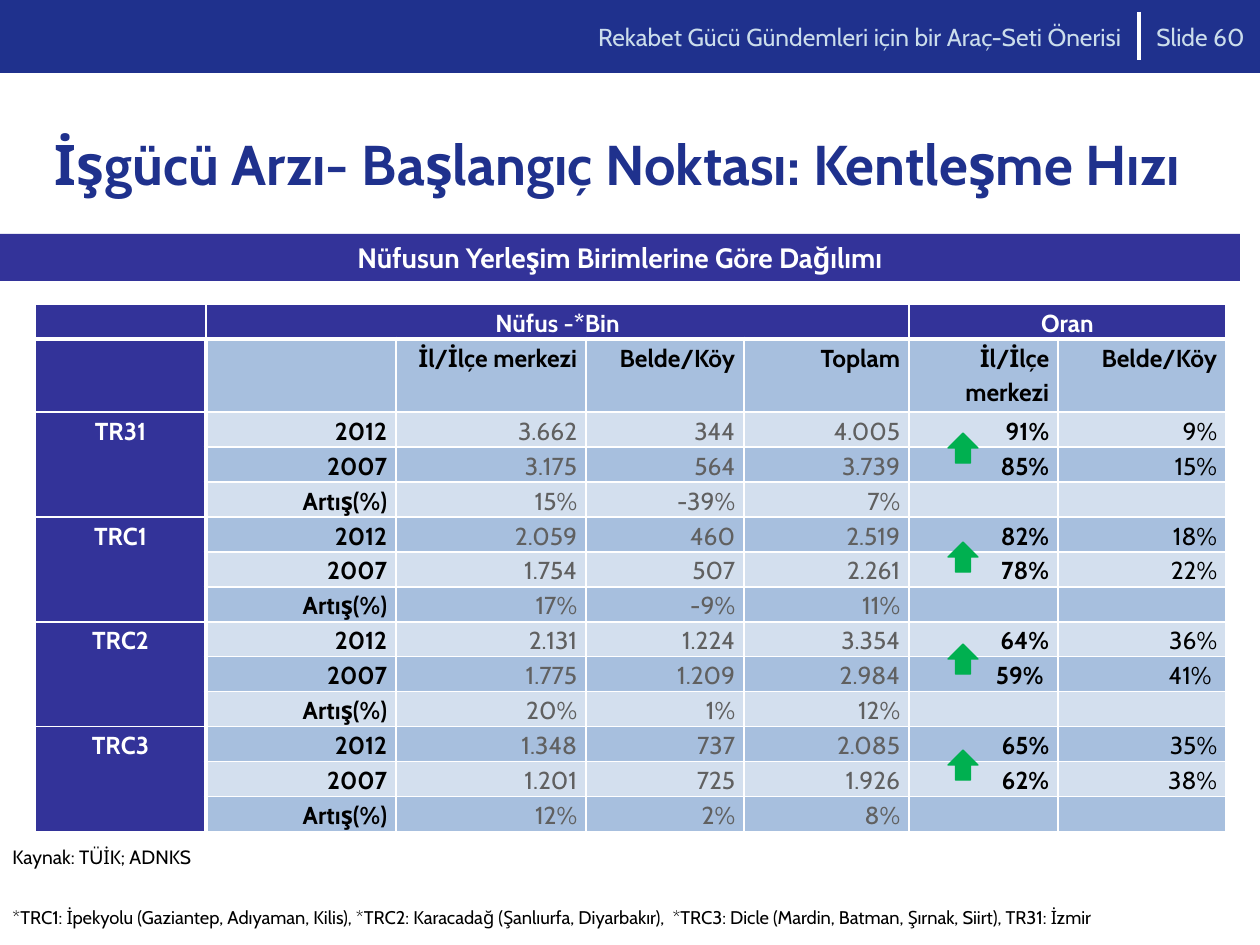
from lxml import etree
from pptx import Presentation
from pptx import util as u
from pptx.dml.color import RGBColor
from pptx.enum import shapes, text
from pptx.oxml import ns

PX = 914400 // 126  # EMU in one px

WHITE = RGBColor(0xFF, 0xFF, 0xFF)
BLACK = RGBColor(0x00, 0x00, 0x00)
GREY = RGBColor(0x60, 0x60, 0x60)
NAVY = RGBColor(0x1F, 0x31, 0x8D)
INDIGO = RGBColor(0x33, 0x33, 0x99)
PALE = RGBColor(0xCB, 0xDD, 0xEB)
BAND_DARK = RGBColor(0xA7, 0xBF, 0xDE)
BAND_LIGHT = RGBColor(0xD3, 0xDF, 0xEE)
GREEN = RGBColor(0x00, 0xB0, 0x50)

LEFT, CENTER, RIGHT = text.PP_ALIGN.LEFT, text.PP_ALIGN.CENTER, text.PP_ALIGN.RIGHT
TOP, MIDDLE = text.MSO_ANCHOR.TOP, text.MSO_ANCHOR.MIDDLE

COLUMNS = [171, 190, 190, 158, 165, 149, 168]
ROWS = [35, 73] + [35] * 12
SUBHEADS = ["", "", "İl/İlçe merkezi", "Belde/Köy", "Toplam", "İl/İlçe merkezi", "Belde/Köy"]
YEARS = ["2012", "2007", "Artış(%)"]
REGIONS = {
    "TR31": [["3.662", "344", "4.005", "91%", "9%"],
             ["3.175", "564", "3.739", "85%", "15%"],
             ["15%", "-39%", "7%", "", ""]],
    "TRC1": [["2.059", "460", "2.519", "82%", "18%"],
             ["1.754", "507", "2.261", "78%", "22%"],
             ["17%", "-9%", "11%", "", ""]],
    "TRC2": [["2.131", "1.224", "3.354", "64%", "36%"],
             ["1.775", "1.209", "2.984", "59% ", "41% "],
             ["20%", "1%", "12%", "", ""]],
    "TRC3": [["1.348", "737", "2.085", "65%", "35%"],
             ["1.201", "725", "1.926", "62%", "38%"],
             ["12%", "2%", "8%", "", ""]],
}
ARROW_TOPS = [433, 542, 644, 750]


def px(*lengths):
    return [length * PX for length in lengths]


def write(frame, words, size, color, bold=False, align=LEFT):
    paragraph = frame.paragraphs[0]
    paragraph.alignment = align
    run = paragraph.add_run()
    run.text = words
    for name, value in {"name": "Cabin", "size": u.Pt(size), "bold": bold}.items():
        setattr(run.font, name, value)
    run.font.color.rgb = color
    return paragraph


def add_label(slide, box, words, size, color, align=LEFT, anchor=TOP):
    frame = slide.shapes.add_textbox(*px(*box)).text_frame
    frame.word_wrap = True
    frame.vertical_anchor = anchor
    write(frame, words, size, color, align=align)


def add_block(slide, preset, box, color):
    block = slide.shapes.add_shape(preset, *px(*box))
    block.shadow.inherit = False
    block.fill.solid()
    block.fill.fore_color.rgb = color
    block.line.fill.background()
    return block


def add_title(slide, box, words):
    title = slide.shapes.title
    for name, value in zip(("left", "top", "width", "height"), px(*box)):
        setattr(title, name, value)
    frame = title.text_frame
    frame.auto_size = text.MSO_AUTO_SIZE.NONE
    frame.vertical_anchor = MIDDLE
    write(frame, words, 32, NAVY, bold=True)


def add_divider(slide, x, top, bottom):
    divider = slide.shapes.add_connector(shapes.MSO_CONNECTOR.STRAIGHT, *px(x, top, x, bottom))
    divider.line.color.rgb = WHITE
    divider.line.width = u.Pt(2.5)
    etree.SubElement(divider._element.spPr, ns.qn("a:effectLst"))


def set_borders(cell, widths):
    properties = cell._tc.get_or_add_tcPr()
    for side in "LRTB":
        line = etree.SubElement(properties, ns.qn(f"a:ln{side}"), w=str(u.Pt(widths.get(side, 1))))
        fill = etree.SubElement(line, ns.qn("a:solidFill"))
        etree.SubElement(fill, ns.qn("a:srgbClr"), val=str(WHITE))


def heavy_sides(row, column):
    """Thick rules lie under the heading row and beside the region column."""
    rules = {"B": row == 0, "T": row == 1,
             "R": row > 0 and column == 0, "L": row > 0 and column == 1}
    return {side: 3 for side, heavy in rules.items() if heavy}


def cell_colors(row, column):
    """Fill, text colour and weight of a cell."""
    if row == 0 or column == 0:
        return INDIGO, WHITE, True
    fill = BAND_DARK if row % 2 else BAND_LIGHT
    if row > 1 and 2 <= column <= 4:
        return fill, GREY, False
    return fill, BLACK, row == 1 or column != 6


def fill_cell(cell, row, column, words):
    margins = {"margin_left": u.Inches(0.07), "margin_right": u.Inches(0.07),
               "margin_top": 0, "margin_bottom": 0}
    for name, value in margins.items():
        setattr(cell, name, value)
    set_borders(cell, heavy_sides(row, column))
    fill, color, bold = cell_colors(row, column)
    cell.fill.solid()
    cell.fill.fore_color.rgb = fill
    if words:
        align = CENTER if row == 0 or column == 0 else RIGHT
        paragraph = write(cell.text_frame, words, 14, color, bold, align)
        paragraph.line_spacing = 1.15
    else:
        # An empty cell keeps the text size, so that its row does not grow
        etree.SubElement(cell.text_frame.paragraphs[0]._p, ns.qn("a:endParaRPr"), sz="1400")


def add_population_table(slide, left, top):
    content = [["", "Nüfus -*Bin", "", "", "", "Oran", ""], SUBHEADS]
    for region, figures in REGIONS.items():
        for number, (year, values) in enumerate(zip(YEARS, figures)):
            content.append([region if number == 0 else "", year] + values)

    size = px(left, top, sum(COLUMNS), sum(ROWS))
    table = slide.shapes.add_table(len(ROWS), len(COLUMNS), *size).table
    table.first_row = table.horz_banding = False
    for column, width in zip(table.columns, px(*COLUMNS)):
        column.width = width
    for row, height in zip(table.rows, px(*ROWS)):
        row.height = height
    for r, line in enumerate(content):
        for c, words in enumerate(line):
            fill_cell(table.cell(r, c), r, c, words)

    # Merged headings and region names
    table.cell(0, 1).merge(table.cell(0, 4))
    table.cell(0, 5).merge(table.cell(0, 6))
    for r in range(2, len(ROWS), len(YEARS)):
        table.cell(r, 0).merge(table.cell(r + len(YEARS) - 1, 0))


def main():
    deck = Presentation()
    deck.slide_width, deck.slide_height = px(1260, 945)
    slide = deck.slides.add_slide(deck.slide_layouts[5])

    # Top bar
    add_block(slide, shapes.MSO_SHAPE.RECTANGLE, (0, 0, 1260, 73), NAVY)
    add_divider(slide, 1139, 12, 60)
    add_label(slide, (262, 0, 872, 74), "Rekabet Gücü Gündemleri için bir Araç-Seti Önerisi",
              14, PALE, RIGHT, MIDDLE)
    add_label(slide, (1144, 0, 116, 74), "Slide 60", 14, PALE, LEFT, MIDDLE)

    # Title and banner
    add_title(slide, (42, 105, 1176, 116), "İşgücü Arzı- Başlangıç Noktası: Kentleşme Hızı")
    banner = add_block(slide, shapes.MSO_SHAPE.RECTANGLE, (0, 234, 1240, 47), INDIGO)
    write(banner.text_frame, "Nüfusun Yerleşim Birimlerine Göre Dağılımı", 16, WHITE, True, CENTER)

    # Population table with growth arrows
    add_population_table(slide, 35, 304)
    for top in ARROW_TOPS:
        arrow = add_block(slide, shapes.MSO_SHAPE.UP_ARROW, (948, top, 30, 30), GREEN)
        arrow.line.color.rgb = GREEN
        arrow.line.width = u.Pt(0.75)

    # Source and footnote
    add_label(slide, (0, 839, 277, 59), "Kaynak: TÜİK; ADNKS", 11, BLACK)
    add_label(slide, (0, 900, 1260, 35),
              "*TRC1: İpekyolu (Gaziantep, Adıyaman, Kilis), *TRC2: Karacadağ (Şanlıurfa, Diyarbakır),  "
              "*TRC3: Dicle (Mardin, Batman, Şırnak, Siirt), TR31: İzmir", 10.5, BLACK)

    deck.save("out.pptx")


if __name__ == "__main__":
    main()
